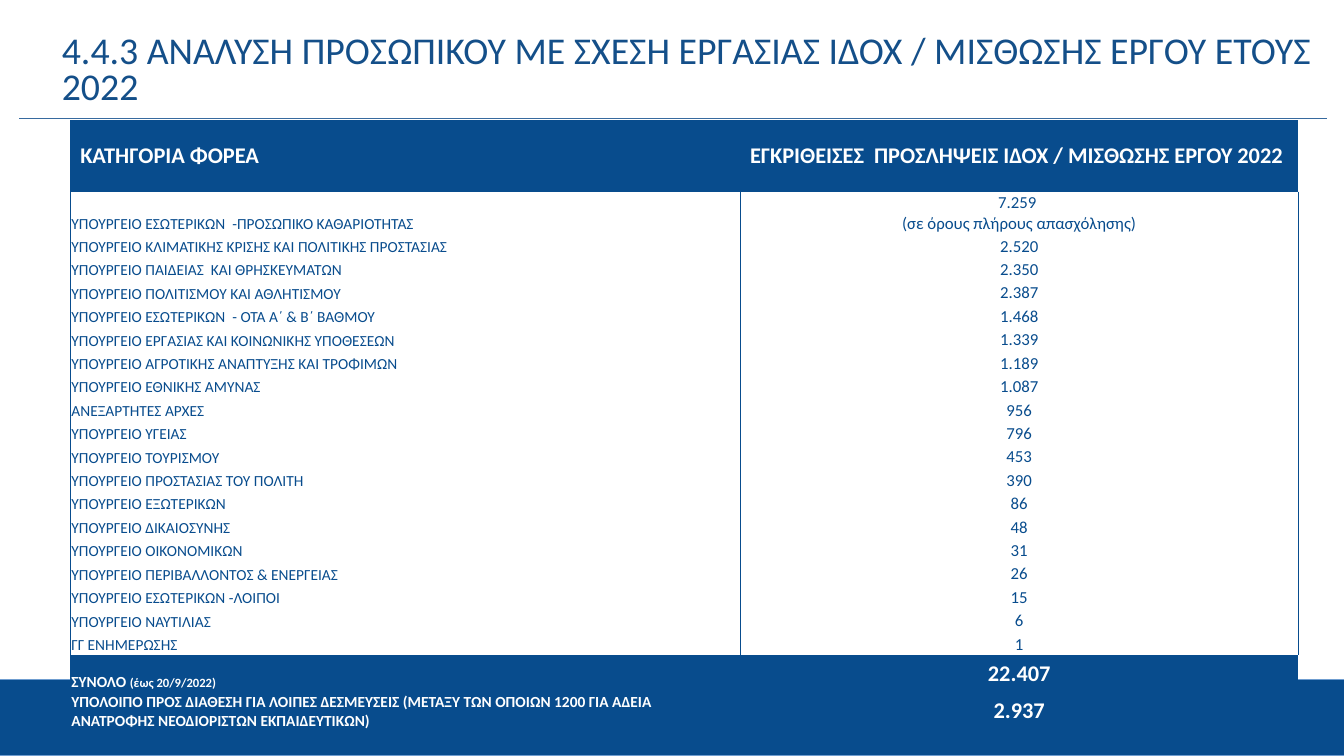
from lxml import etree
from pptx import Presentation
from pptx import util as u
from pptx.dml import color
from pptx.enum import shapes, text
from pptx.oxml import ns

NAVY, TITLE, RULE, EDGE, WHITE = "084C8D", "144F89", "376A9F", "6F9DD0", "FFFFFF"
HEADERS = ("ΚΑΤΗΓΟΡΙΑ ΦΟΡΕΑ", "ΕΓΚΡΙΘΕΙΣΕΣ  ΠΡΟΣΛΗΨΕΙΣ ΙΔΟΧ / ΜΙΣΘΩΣΗΣ ΕΡΓΟΥ 2022")
HIRES = [
    ("ΥΠΟΥΡΓΕΙΟ ΕΣΩΤΕΡΙΚΩΝ  -ΠΡΟΣΩΠΙΚΟ ΚΑΘΑΡΙΟΤΗΤΑΣ",
     "7.259 \v(σε όρους πλήρους απασχόλησης)"),
    ("ΥΠΟΥΡΓΕΙΟ ΚΛΙΜΑΤΙΚΗΣ ΚΡΙΣΗΣ ΚΑΙ ΠΟΛΙΤΙΚΗΣ ΠΡΟΣΤΑΣΙΑΣ", "2.520"),
    ("ΥΠΟΥΡΓΕΙΟ ΠΑΙΔΕΙΑΣ  ΚΑΙ ΘΡΗΣΚΕΥΜΑΤΩΝ", "2.350"),
    ("ΥΠΟΥΡΓΕΙΟ ΠΟΛΙΤΙΣΜΟΥ ΚΑΙ ΑΘΛΗΤΙΣΜΟΥ", "2.387"),
    ("ΥΠΟΥΡΓΕΙΟ ΕΣΩΤΕΡΙΚΩΝ  - ΟΤΑ Α΄ & Β΄ ΒΑΘΜΟΥ", "1.468"),
    ("ΥΠΟΥΡΓΕΙΟ ΕΡΓΑΣΙΑΣ ΚΑΙ ΚΟΙΝΩΝΙΚΗΣ ΥΠΟΘΕΣΕΩΝ", "1.339"),
    ("ΥΠΟΥΡΓΕΙΟ ΑΓΡΟΤΙΚΗΣ ΑΝΑΠΤΥΞΗΣ ΚΑΙ ΤΡΟΦΙΜΩΝ", "1.189"),
    ("ΥΠΟΥΡΓΕΙΟ ΕΘΝΙΚΗΣ ΑΜΥΝΑΣ", "1.087"),
    ("ΑΝΕΞΑΡΤΗΤΕΣ ΑΡΧΕΣ", "956"),
    ("ΥΠΟΥΡΓΕΙΟ ΥΓΕΙΑΣ", "796"),
    ("ΥΠΟΥΡΓΕΙΟ ΤΟΥΡΙΣΜΟΥ", "453"),
    ("ΥΠΟΥΡΓΕΙΟ ΠΡΟΣΤΑΣΙΑΣ ΤΟΥ ΠΟΛΙΤΗ", "390"),
    ("ΥΠΟΥΡΓΕΙΟ ΕΞΩΤΕΡΙΚΩΝ", "86"),
    ("ΥΠΟΥΡΓΕΙΟ ΔΙΚΑΙΟΣΥΝΗΣ", "48"),
    ("ΥΠΟΥΡΓΕΙΟ ΟΙΚΟΝΟΜΙΚΩΝ", "31"),
    ("ΥΠΟΥΡΓΕΙΟ ΠΕΡΙΒΑΛΛΟΝΤΟΣ & ΕΝΕΡΓΕΙΑΣ", "26"),
    ("ΥΠΟΥΡΓΕΙΟ ΕΣΩΤΕΡΙΚΩΝ -ΛΟΙΠΟΙ", "15"),
    ("ΥΠΟΥΡΓΕΙΟ ΝΑΥΤΙΛΙΑΣ", "6"),
    ("ΓΓ ΕΝΗΜΕΡΩΣΗΣ", "1"),
]
TOTAL_NOTE = "(έως 20/9/2022)"
TOTALS = [
    ("ΣΥΝΟΛΟ ", "22.407"),
    ("ΥΠΟΛΟΙΠΟ ΠΡΟΣ ΔΙΑΘΕΣΗ ΓΙΑ ΛΟΙΠΕΣ ΔΕΣΜΕΥΣΕΙΣ (ΜΕΤΑΞΥ ΤΩΝ ΟΠΟΙΩΝ 1200 ΓΙΑ ΑΔΕΙΑ "
     "ΑΝΑΤΡΟΦΗΣ ΝΕΟΔΙΟΡΙΣΤΩΝ ΕΚΠΑΙΔΕΥΤΙΚΩΝ)", "2.937"),
]


def rgb(value):
    return color.RGBColor.from_string(value)


class Deck:
    font = "Calibri"

    def __init__(self, prs):
        self.s = prs.slides.add_slide(prs.slide_layouts[6])

    def style(self, r, size, hue, bold=False):
        r.font.name, r.font.size, r.font.bold = self.font, u.Pt(size), bold
        r.font.color.rgb = rgb(hue)

    def title(self, words, x, y, w, h):
        tf = self.s.shapes.add_textbox(u.Cm(x), u.Cm(y), u.Cm(w), u.Cm(h)).text_frame
        tf.word_wrap = True
        tf.margin_left = tf.margin_right = tf.margin_top = tf.margin_bottom = u.Cm(0.13)
        tf.text = words
        p = tf.paragraphs[0]
        p.line_spacing = 0.8
        self.style(p.runs[0], 27, TITLE)

    def band(self, x, y, w, h):
        sp = self.s.shapes.add_shape(
            shapes.MSO_SHAPE.RECTANGLE, u.Cm(x), u.Cm(y), u.Cm(w), u.Cm(h))
        sp.shadow.inherit = False
        sp.fill.solid()
        sp.fill.fore_color.rgb = rgb(NAVY)
        sp.line.color.rgb = rgb(EDGE)
        sp.line.width = u.Pt(1)

    def rule(self, x1, x2, y):
        ln = self.s.shapes.add_connector(
            shapes.MSO_CONNECTOR.STRAIGHT, u.Cm(x1), u.Cm(y), u.Cm(x2), u.Cm(y))
        ln.line.color.rgb = rgb(RULE)
        ln.line.width = u.Pt(0.5)
        etree.SubElement(ln._element.spPr, ns.qn("a:effectLst"))

    def table(self, x, y, widths, heights):
        frame = self.s.shapes.add_table(len(heights), len(widths), u.Cm(x), u.Cm(y),
                                        u.Cm(sum(widths)), u.Cm(sum(heights)))
        tbl = frame.table
        tbl.first_row = tbl.horz_banding = False
        for col, w in zip(tbl.columns, widths):
            col.width = u.Cm(w)
        for row, h in zip(tbl.rows, heights):
            row.height = u.Cm(h)
        return tbl

    def cell(self, cell, words, size, hue, bold, anchor, centred, tight, fill, sides):
        cell.text = words
        cell.vertical_anchor = anchor
        if tight:
            cell.margin_left = cell.margin_right = cell.margin_top = u.Cm(0.03)
            cell.margin_bottom = 0
        p = cell.text_frame.paragraphs[0]
        p.alignment = text.PP_ALIGN.CENTER if centred else text.PP_ALIGN.LEFT
        for r in p.runs:
            self.style(r, size, hue, bold)
        if fill:
            cell.fill.solid()
            cell.fill.fore_color.rgb = rgb(fill)
        else:
            cell.fill.background()
        self.borders(cell, sides)
        return p

    def borders(self, cell, sides):
        """Draw the named sides (out of LRTB) and hide the others."""
        tc_pr = cell._tc.get_or_add_tcPr()
        for i, side in enumerate("LRTB"):
            ln = etree.Element(ns.qn("a:ln" + side), w=str(u.Pt(0.25)))
            if side in sides:
                paint = etree.SubElement(ln, ns.qn("a:solidFill"))
                etree.SubElement(paint, ns.qn("a:srgbClr"), val=NAVY)
            else:
                etree.SubElement(ln, ns.qn("a:noFill"))
            tc_pr.insert(i, ln)


def main():
    prs = Presentation()
    prs.slide_width, prs.slide_height = u.Cm(33.87), u.Cm(19.05)
    deck = Deck(prs)
    deck.title("4.4.3 ΑΝΑΛΥΣΗ ΠΡΟΣΩΠΙΚΟΥ ΜΕ ΣΧΕΣΗ ΕΡΓΑΣΙΑΣ ΙΔΟΧ / ΜΙΣΘΩΣΗΣ ΕΡΓΟΥ ΕΤΟΥΣ 2022",
               1.43, 0.76, 32.48, 3.02)
    deck.band(-0.05, 17.12, 33.96, 1.93)
    deck.rule(0.48, 33.45, 2.97)

    heights = [1.8] + [0.59] * len(HIRES) + [0.89] * len(TOTALS)
    tbl = deck.table(1.77, 3.03, [16.88, 14.07], heights)
    top, middle, bottom = (text.MSO_ANCHOR.TOP, text.MSO_ANCHOR.MIDDLE,
                           text.MSO_ANCHOR.BOTTOM)

    for col, (words, sides) in enumerate(zip(HEADERS, ("LT", "T"))):
        deck.cell(tbl.cell(0, col), words, 16, WHITE, True, middle, False, False, NAVY, sides)
    for row, (body, count) in enumerate(HIRES, 1):
        deck.cell(tbl.cell(row, 0), body, 11, NAVY, False, bottom, False, True, None, "LR")
        deck.cell(tbl.cell(row, 1), count, 12, NAVY, False, bottom, True, True, None, "LR")
    first_total = 1 + len(HIRES)
    for row, (label, count) in enumerate(TOTALS, first_total):
        base = "B" if row == len(heights) - 1 else ""
        p = deck.cell(tbl.cell(row, 0), label, 11, WHITE, True, bottom, False, True,
                      NAVY, "L" + base)
        deck.cell(tbl.cell(row, 1), count, 16, WHITE, True, top, True, False, NAVY, base)
        if row == first_total:
            r = p.add_run()
            r.text = TOTAL_NOTE
            deck.style(r, 9, WHITE, True)

    prs.save("out.pptx")


if __name__ == "__main__":
    main()
